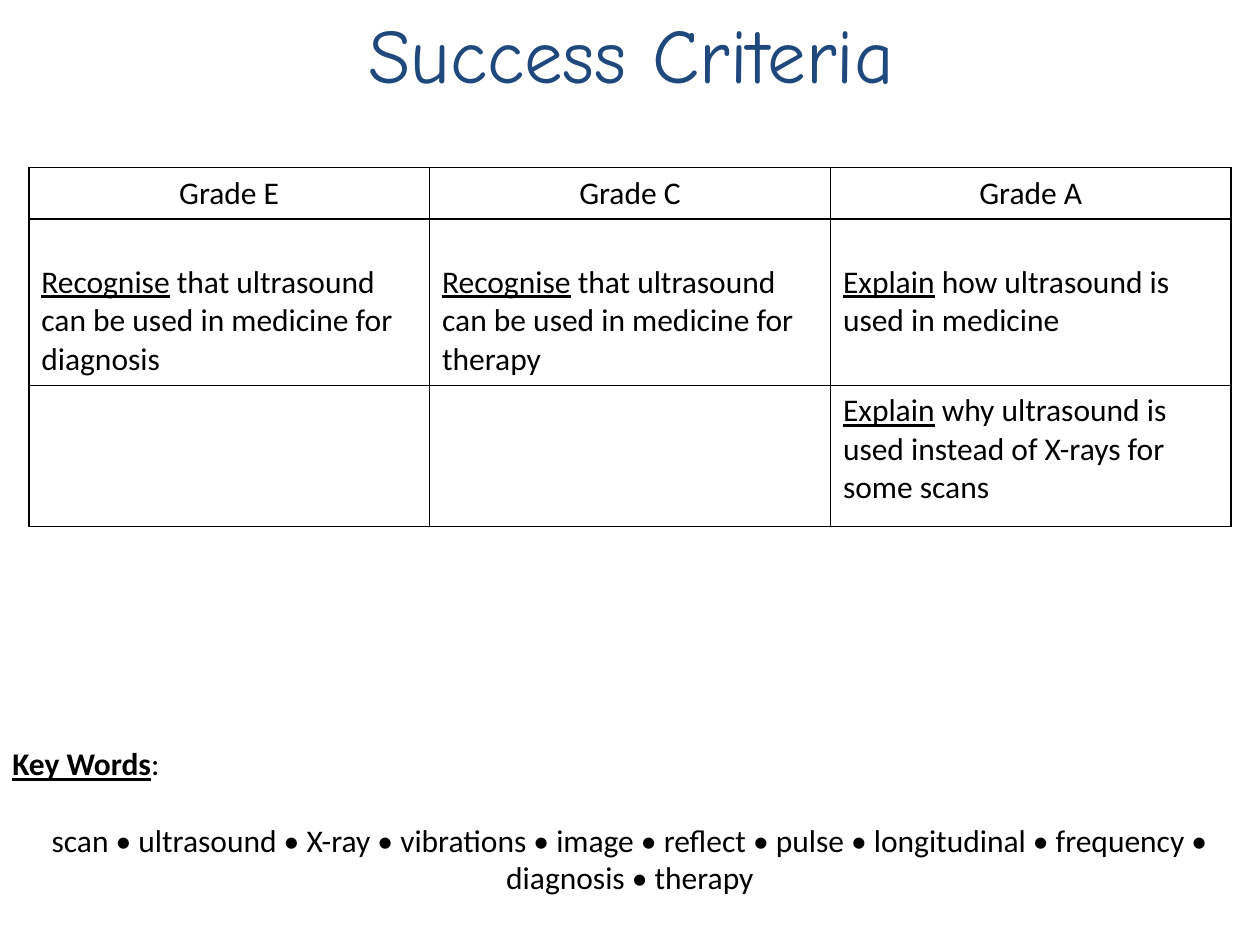
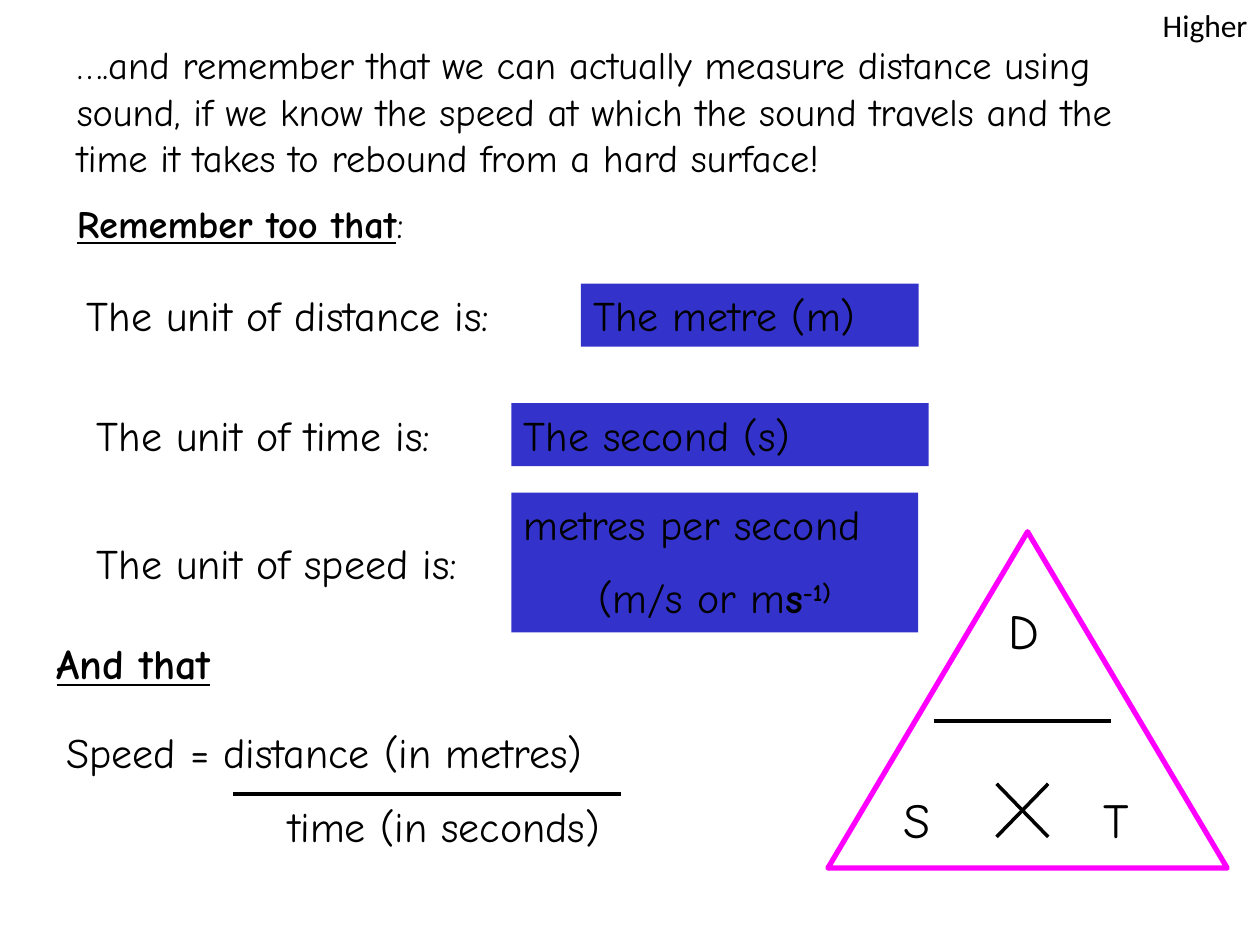
"""Build two lesson slides on ultrasound: success criteria and units of speed."""
import pptx
import pptx.dml.color
import pptx.enum.shapes
import pptx.enum.text
import pptx.oxml
import pptx.oxml.ns
import pptx.util

Cm = pptx.util.Cm
Pt = pptx.util.Pt
RGBColor = pptx.dml.color.RGBColor
SHAPE = pptx.enum.shapes.MSO_SHAPE
ALIGN = pptx.enum.text.PP_ALIGN
TOP = pptx.enum.text.MSO_ANCHOR.TOP

BLACK = RGBColor(0x00, 0x00, 0x00)
NAVY = RGBColor(0x1F, 0x49, 0x7D)
BLUE = RGBColor(0x33, 0x33, 0xCC)
PINK = RGBColor(0xFF, 0x00, 0xFF)

PLAIN = {"name": "Calibri", "size": Pt(18)}
HEAD = {"name": "Comic Neue", "size": Pt(44)}
BODY = {"name": "Comic Neue", "size": Pt(24)}
INTRO = {"name": "Comic Neue", "size": Pt(22)}
SIGN = {"name": "Comic Neue", "size": Pt(28)}
UNDER = {"underline": True}
STRONG = {"bold": True, "underline": True}
BOLD = {"bold": True}
CENTRE = {"alignment": ALIGN.CENTER}
RIGHT = {"alignment": ALIGN.RIGHT}
GAP = {"space_before": Pt(13)}

TITLE = [(["Success Criteria"], CENTRE)]
KEYS = [
    ([("Key Words", STRONG), ":"], {}),
    (["scan • ultrasound • X-ray • vibrations • image • reflect • pulse • "
      "longitudinal • frequency • diagnosis • therapy"], {**CENTRE, "space_before": Pt(22)}),
]
GRADES = ["Grade E", "Grade C", "Grade A"]
GOALS = [
    [("Recognise", " that ultrasound can be used in medicine for diagnosis"),
     ("Recognise", " that ultrasound can be used in medicine for therapy"),
     ("Explain", " how ultrasound is used in medicine")],
    [None, None, ("Explain", " why ultrasound is used instead of X-rays for some scans")],
]
WIDTH = 8.08
ROWS = [1.03, 3.36, 2.84]
DROPS = [0.13, 0.9, 0.13]

RULE = (4.7, 16, 12.52, 16)
SPEED = [(["Speed = distance (in metres)"], {}), (["time (in seconds)"], GAP)]
INDENT = 4.48
SIGNS = [("D", 20.09, 11.99), ("T", 22, 15.8), ("S", 17.96, 15.8)]
BARS = [
    (18.82, 14.53, 22.4, 14.53),
    (20.09, 16.87, 21.13, 15.8),
    (21.13, 16.87, 20.09, 15.8),
]
UNITS = [
    ("The unit of distance is:", (1.5, 5.72, 9.8, 1.27),
     [(["The metre (m)"], {})], (11.71, 5.72, 6.81, 1.27)),
    ("The unit of time is:", (1.7, 8.13, 8.41, 1.27),
     [(["The second (s)"], {})], (10.31, 8.13, 8.41, 1.27)),
    ("The unit of speed is:", (1.7, 10.72, 8.99, 1.27),
     [(["metres per second"], {}),
      (["(m/s or m", ("s", BOLD), ("-1)", {**BOLD, "raised": True})], {**CENTRE, **GAP})],
     (10.31, 9.93, 8.2, 2.82)),
]
LEAD = [
    (["….and remember that we can actually measure distance using sound, if we know the "
      "speed at which the sound travels and the time it takes to rebound from a hard "
      "surface!"], {}),
    ([("Remember too that", STRONG), ":"], {"space_before": Pt(11.5)}),
]


def apply(thing, style):
    for key, value in style.items():
        setattr(thing, key, value)


def write(frame, paras, font, color=BLACK):
    for i, (runs, style) in enumerate(paras):
        para = frame.add_paragraph() if i else frame.paragraphs[0]
        apply(para, {"alignment": ALIGN.LEFT, **style})
        for part in runs:
            text, extra = (part, {}) if isinstance(part, str) else part
            look = {**font, **extra}
            raised = look.pop("raised", False)
            run = para.add_run()
            run.text = text
            apply(run.font, look)
            run.font.color.rgb = color
            if raised:
                run.font._element.set("baseline", "30000")


def place(shapes, box, paras, font, color=BLACK, fill=None):
    spot = [Cm(n) for n in box]
    if fill is None:
        shape = shapes.add_textbox(*spot)
    else:
        shape = shapes.add_shape(SHAPE.RECTANGLE, *spot)
        shape.shadow.inherit = False
        shape.fill.solid()
        shape.fill.fore_color.rgb = fill
        shape.line.fill.background()
    apply(shape.text_frame, {"word_wrap": True, "vertical_anchor": TOP})
    write(shape.text_frame, paras, font, color)
    return shape


def draw(shapes, ends, width):
    line = shapes.add_connector(
        pptx.enum.shapes.MSO_CONNECTOR.STRAIGHT, *[Cm(n) for n in ends])
    line.line.color.rgb = BLACK
    line.line.width = Pt(width)
    line._element.spPr.append(pptx.oxml.parse_xml(
        f"<a:effectLst {pptx.oxml.ns.nsdecls('a')}/>"))


def edge(cell):
    props = cell._tc.get_or_add_tcPr()
    for i, side in enumerate(("lnL", "lnR", "lnT", "lnB")):
        props.insert(i, pptx.oxml.parse_xml(
            f'<a:{side} {pptx.oxml.ns.nsdecls("a")} w="12700"><a:solidFill>'
            f'<a:srgbClr val="{BLACK}"/></a:solidFill></a:{side}>'))


def chart_goals(shapes):
    table = shapes.add_table(
        len(ROWS), len(GRADES), Cm(0.58), Cm(3.38),
        Cm(WIDTH * len(GRADES)), Cm(sum(ROWS))).table
    apply(table, {"first_row": False, "horz_banding": False})
    for col in table.columns:
        col.width = Cm(WIDTH)
    texts = [[([name], CENTRE) for name in GRADES]]
    texts += [[goal and ([(goal[0], UNDER), goal[1]], {}) for goal in row] for row in GOALS]
    for r, row in enumerate(texts):
        table.rows[r].height = Cm(ROWS[r])
        for c, para in enumerate(row):
            cell = table.cell(r, c)
            cell.margin_top = Cm(DROPS[r])
            cell.fill.background()
            edge(cell)
            if para:
                write(cell.text_frame, [para], PLAIN)


def show_goals(shapes):
    place(shapes, (1.3, 0, 22.86, 3.18), TITLE, HEAD, NAVY)
    chart_goals(shapes)
    place(shapes, (0, 14.88, 25.4, 3.33), KEYS, PLAIN)


def show_units(shapes):
    ratio = shapes.add_group_shape().shapes
    box = place(ratio, (1.09, 14.53, 13.97, 2.82), SPEED, BODY)
    lower = box.text_frame.paragraphs[1]
    lower._p.get_or_add_pPr().set("marL", str(Cm(INDENT)))
    draw(ratio, RULE, 2.5)

    group = shapes.add_group_shape().shapes
    frame = group.add_shape(
        SHAPE.FLOWCHART_EXTRACT, Cm(16.69), Cm(10.72), Cm(8.05), Cm(6.78))
    frame.shadow.inherit = False
    frame.fill.background()
    frame.line.color.rgb = PINK
    frame.line.width = Pt(3)
    for sign, left, top in SIGNS:
        place(group, (left, top, 2.54, 1.45), [([sign], {})], SIGN)
    for ends in BARS:
        draw(group, ends, 2)

    for label, spot, answer, box in UNITS:
        place(shapes, spot, [([label], {})], BODY)
        place(shapes, box, answer, BODY, fill=BLUE)
    place(shapes, (1.3, 0.71, 22.81, 4.45), LEAD, INTRO)
    place(shapes, (0.89, 12.73, 4.8, 1.27), [([("And that", STRONG)], {})], BODY)
    place(shapes, (21.23, 0, 4.17, 1.02), [(["Higher"], RIGHT)], PLAIN)


def main():
    deck = pptx.Presentation()
    apply(deck, {"slide_width": Cm(25.4), "slide_height": Cm(19.05)})
    for show in (show_goals, show_units):
        show(deck.slides.add_slide(deck.slide_layouts[6]).shapes)
    deck.save("out.pptx")


if __name__ == "__main__":
    main()
